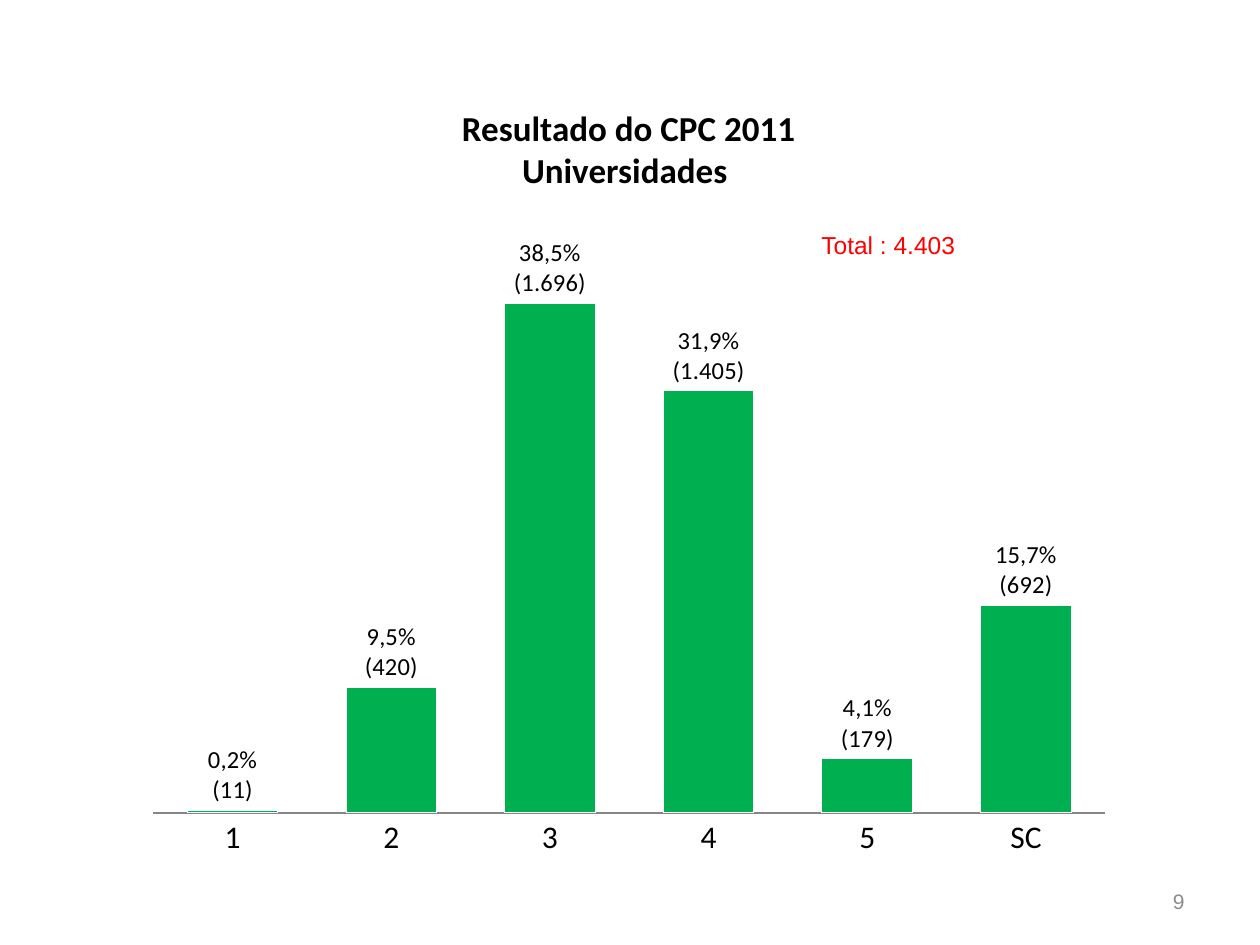
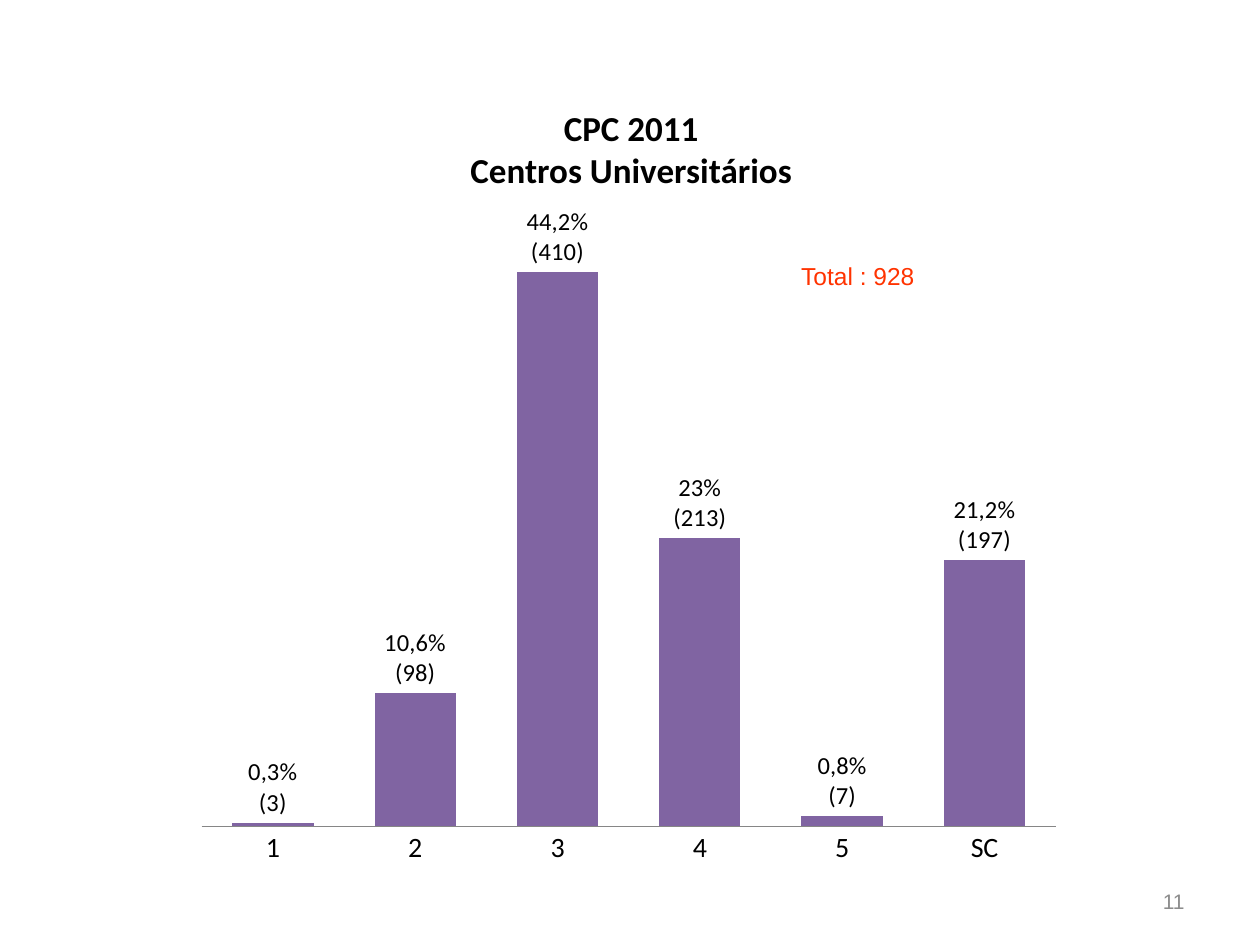
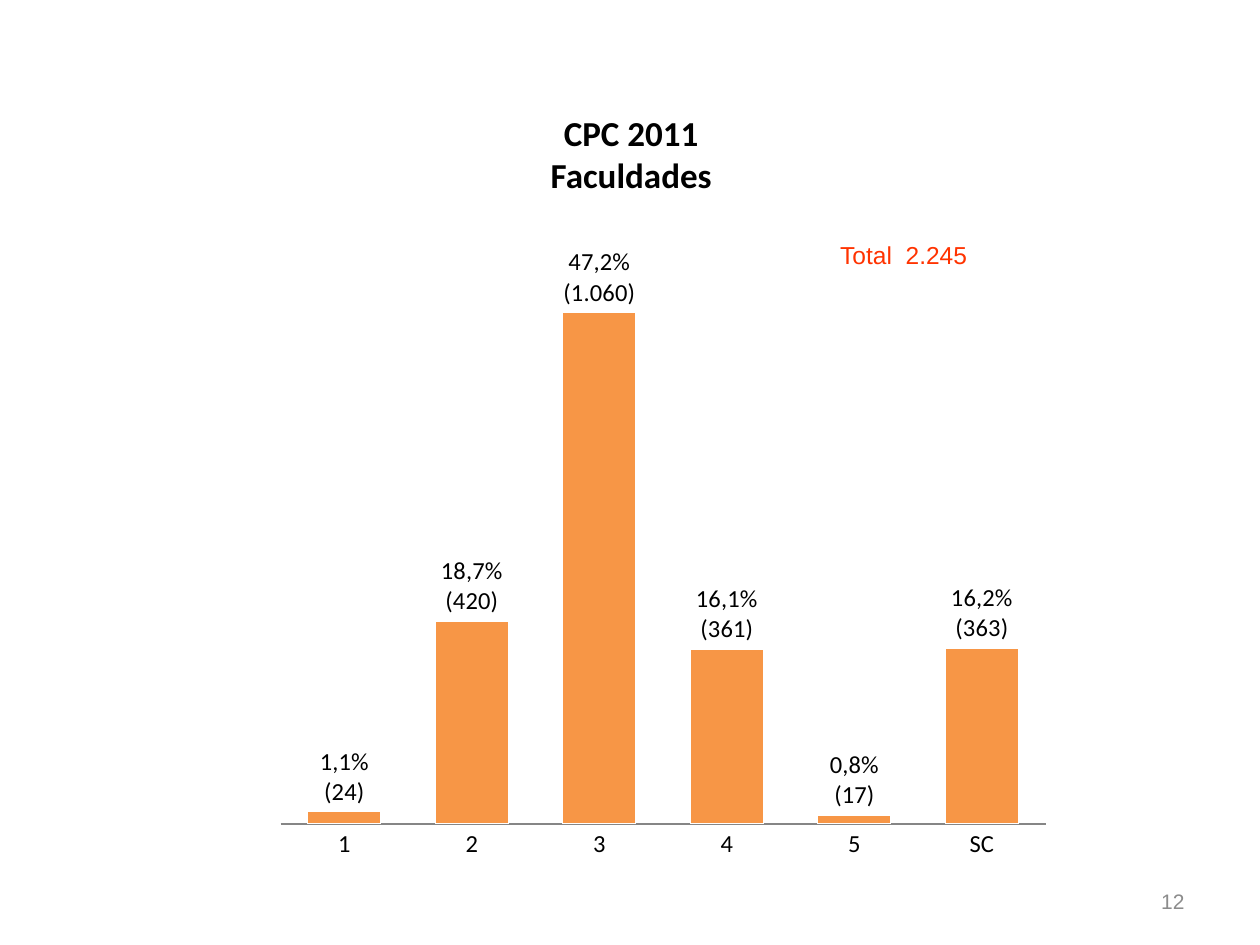
from lxml.etree import SubElement
from pptx import Presentation
from pptx.chart.data import CategoryChartData
from pptx.dml.color import RGBColor
from pptx.enum.chart import XL_CHART_TYPE as ChartType, XL_LABEL_POSITION as LabelPos, XL_TICK_MARK as Tick
from pptx.enum.text import MSO_ANCHOR as Anchor, PP_ALIGN as Align
from pptx.oxml.ns import qn
from pptx.util import Inches, Pt

COLORS = {
    "text": "000000", "number": "8C8C8C", "axis": "868686", "white": "FFFFFF",
    "green": "00B050", "purple": "8064A2", "blue": "4F81BD", "orange": "F79646",
    "red": "FF0000", "vermilion": "FF3300",
}
GRADES = ["1", "2", "3", "4", "5", "SC"]
PERCENT = "0.0%"

SLIDES = [
    dict(
        number="9", title="Resultado do CPC 2011\nUniversidades ", title_box=(0.49, 0.84, 9, 1.02),
        total="Total : 4.403", total_at=(6.42, 1.78), total_color="red",
        chart=dict(
            box=(1.06, 1.62, 7.87, 5.28), size=18, color="green", outlined=True,
            values=[0.002, 0.095, 0.385, 0.319, 0.041, 0.157],
            labels=["0,2%\n(11)", "9,5%\n(420)", "38,5%\n(1.696)",
                    "31,9%\n(1.405)", "4,1%\n(179)", "15,7%\n(692)"],
        ),
    ),
    dict(
        number="11", title="CPC 2011\nCentros Universitários", title_box=(0.51, 0.84, 9, 1.02),
        total="Total : 928", total_at=(6.26, 2.02), total_color="vermilion",
        chart=dict(
            box=(1.46, 1.47, 7.06, 5.51), size=16, color="purple",
            values=[0.003, 0.106, 0.442, 0.23, 0.008, 0.212],
            labels=["0,3%\n(3)", "10,6%\n(98)", "44,2%\n(410)",
                    "23%\n(213)", "0,8%\n(7)", "21,2%\n(197)"],
        ),
    ),
    dict(
        number="12", title="CPC 2011\nFaculdades", title_box=(0.51, 0.99, 9, 0.79),
        total="Total  2.245", total_at=(6.57, 1.86), total_color="vermilion",
        chart=dict(
            box=(1.46, 1.47, 6.98, 5.51), plot=(0.11, 0.14, 0.87, 0.78), size=14,
            color="blue", bar_color="orange", outlined=True,
            values=[0.011, 0.187, 0.472, 0.161, 0.008, 0.162],
            labels=["1,1%\n(24)", "18,7%\n(420)", "47,2%\n(1.060)",
                    "16,1%\n(361)", "0,8%\n(17)", "16,2%\n(363)"],
        ),
    ),
]


def rgb(name):
    return RGBColor.from_string(COLORS[name])


def style_font(font, size, name="Calibri", color="text", bold=False):
    font.size = Pt(size)
    font.name = name
    font.bold = bold
    font.color.rgb = rgb(color)


def write(tf, text, align=None, **fmt):
    tf.text = text
    for p in tf.paragraphs:
        p.alignment = align
        for r in p.runs:
            style_font(r.font, **fmt)


def add_text(s, box, text, anchor=Anchor.TOP, bottom=0.05, **fmt):
    tf = s.shapes.add_textbox(*map(Inches, box)).text_frame
    tf.word_wrap = True
    tf.vertical_anchor = anchor
    tf.margin_bottom = Inches(bottom)
    write(tf, text, **fmt)


def set_plot(chart, plot):
    area = chart.plots[0]._element.getparent()
    layout = area.find(qn("c:layout"))
    if layout is None:
        layout = area.makeelement(qn("c:layout"))
        area.insert(0, layout)
    manual = SubElement(layout, qn("c:manualLayout"))
    settings = [("layoutTarget", "inner"), ("xMode", "edge"), ("yMode", "edge")]
    settings += zip("xywh", plot)
    for tag, value in settings:
        SubElement(manual, qn(f"c:{tag}")).set("val", str(value))


def paint_bars(fmt, color, outlined):
    fmt.fill.solid()
    fmt.fill.fore_color.rgb = rgb(color)
    if outlined:
        fmt.line.color.rgb = rgb("white")
    else:
        fmt.line.fill.background()


def label_bars(series, labels):
    shared = series.data_labels
    style_font(shared.font, 14)
    shared.number_format = PERCENT
    shared.number_format_is_linked = False
    shared.position = LabelPos.OUTSIDE_END
    shared.show_value = True
    for i, text in enumerate(labels):
        label = series.points[i].data_label
        write(label.text_frame, text, size=14)
        label.position = LabelPos.OUTSIDE_END


def add_grade_chart(s, box, size, color, values, labels, plot=None, bar_color=None, outlined=False):
    data = CategoryChartData(number_format=PERCENT)
    data.categories = GRADES
    data.add_series("Series 1", values)
    chart = s.shapes.add_chart(ChartType.COLUMN_CLUSTERED, *map(Inches, box), data).chart
    chart.has_legend = chart.has_title = False
    style_font(chart.font, size)
    if plot:
        set_plot(chart, plot)

    cat = chart.category_axis
    cat.major_tick_mark = Tick.NONE
    cat.format.line.color.rgb = rgb("axis")
    cat.format.line.width = Pt(1)
    val = chart.value_axis
    val.visible = val.has_major_gridlines = False
    val.tick_labels.number_format = PERCENT
    val.tick_labels.number_format_is_linked = False

    bars = chart.plots[0]
    bars.gap_width = 75
    bars.vary_by_categories = False
    series = bars.series[0]
    paint_bars(series.format, color, outlined)
    if bar_color:
        for i in range(len(values)):
            paint_bars(series.points[i].format, bar_color, outlined)
    label_bars(series, labels)


def add_result_slide(prs, number, title, title_box, total, total_at, total_color, chart):
    s = prs.slides.add_slide(prs.slide_layouts[6])
    add_text(s, title_box, title, anchor=Anchor.MIDDLE, bottom=0.39,
             align=Align.CENTER, size=20, bold=True)
    add_text(s, (7.17, 6.95, 2.33, 0.4), number, anchor=Anchor.MIDDLE,
             align=Align.RIGHT, size=12, name="Arial", color="number")
    add_grade_chart(s, **chart)
    add_text(s, (*total_at, 2.68, 0.34), total, size=14, name="Arial", color=total_color)


def main():
    prs = Presentation()
    prs.slide_width, prs.slide_height = Inches(10), Inches(7.5)
    for slide in SLIDES:
        add_result_slide(prs, **slide)
    prs.save("out.pptx")


if __name__ == "__main__":
    main()
